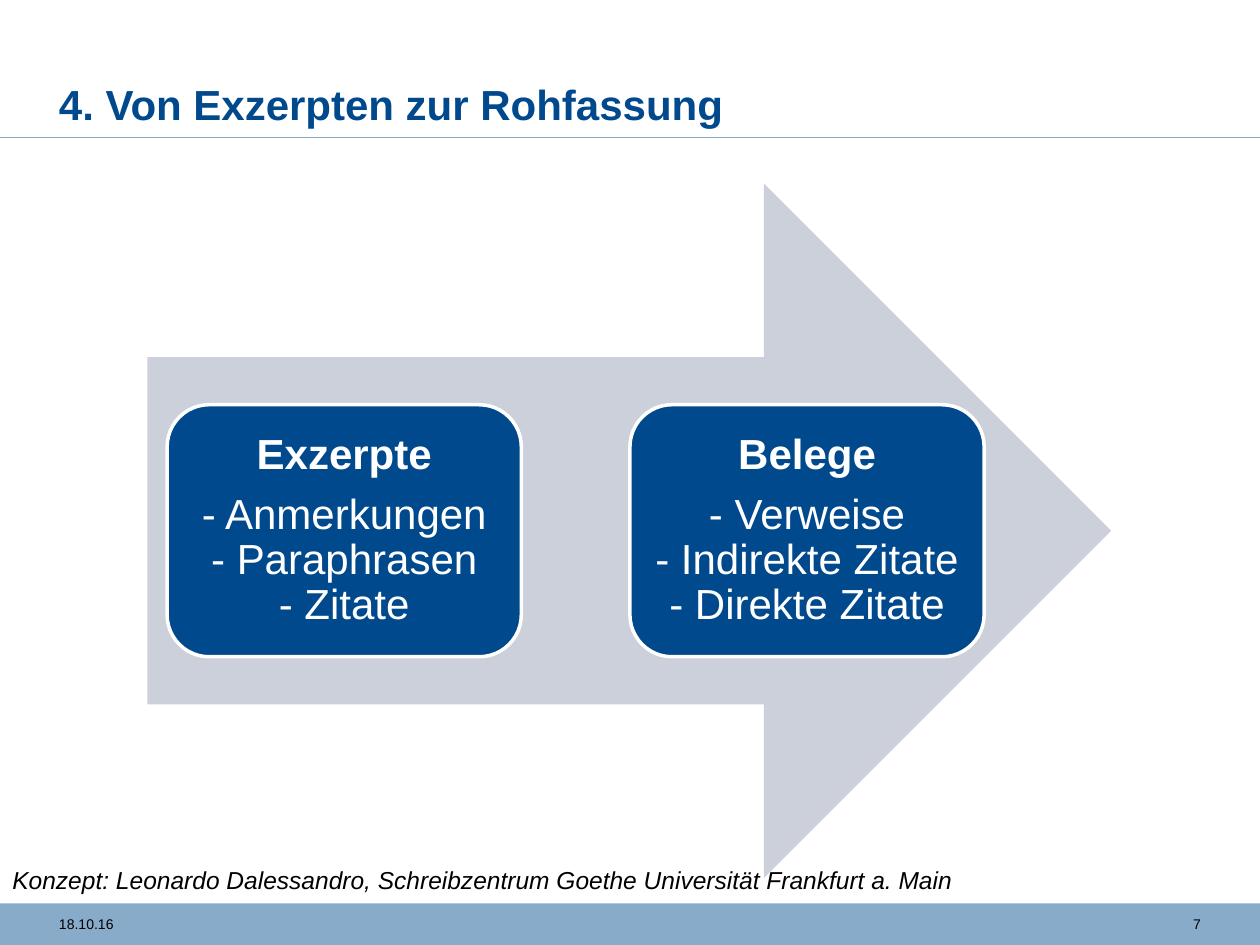
from dataclasses import dataclass

from lxml.etree import SubElement
from pptx import Presentation
from pptx.dml.color import RGBColor
from pptx.enum.shapes import MSO_CONNECTOR, MSO_SHAPE
from pptx.enum.text import MSO_ANCHOR, PP_ALIGN
from pptx.oxml.ns import qn
from pptx.util import Cm, Pt


@dataclass(frozen=True)
class Theme:
    font: str = "Arial"
    navy: str = "00498D"
    sky: str = "89ABCA"
    pale: str = "CCD0DB"
    white: str = "FFFFFF"
    black: str = "000000"
    large: int = 24
    note: int = 14
    small: int = 8


THEME = Theme()
WIDTH, HEIGHT = 25.4, 19.05
CARDS = [
    ("Exzerpte", ["- Anmerkungen", "- Paraphrasen", "- Zitate"]),
    ("Belege", ["- Verweise", "- Indirekte Zitate", "- Direkte Zitate"]),
]


def apply(target, **values):
    for name, value in values.items():
        setattr(target, name, value)


def style(para, size, color, **values):
    apply(para.font, name=THEME.font, size=Pt(size), **values)
    para.font.color.rgb = RGBColor.from_string(color)


def block(slide, kind, box, fill, edge=None):
    shape = slide.shapes.add_shape(kind, *map(Cm, box))
    shape.shadow.inherit = False
    shape.fill.solid()
    shape.fill.fore_color.rgb = RGBColor.from_string(fill)
    if edge:
        shape.line.color.rgb = RGBColor.from_string(edge)
        shape.line.width = Pt(2)
    else:
        shape.line.fill.background()
    return shape


def label(slide, box, text, size, color, frame=None, align=PP_ALIGN.LEFT, **font):
    area = slide.shapes.add_textbox(*map(Cm, box)).text_frame
    basic = {"word_wrap": True, "margin_left": 0, "margin_right": 0}
    apply(area, **(basic | (frame or {})))
    para = area.paragraphs[0]
    apply(para, text=text, alignment=align)
    style(para, size, color, **font)


def header(slide, box, text):
    left, top, width, height = box
    # Title
    label(slide, (left + 1.19, top + 0.41, 20.4, 2.31), text, THEME.large,
          THEME.navy, {"vertical_anchor": MSO_ANCHOR.BOTTOM}, bold=True)
    # Rule below the title
    base = Cm(top + height)
    rule = slide.shapes.add_connector(
        MSO_CONNECTOR.STRAIGHT, Cm(left + width), base, Cm(left), base)
    rule.line.color.rgb = RGBColor.from_string(THEME.sky)
    rule.line.width = Pt(1)
    SubElement(rule._element.spPr, qn("a:effectLst"))


def card(slide, box, head, items):
    shape = block(slide, MSO_SHAPE.ROUNDED_RECTANGLE, box, THEME.navy, THEME.white)
    area = shape.text_frame
    apply(area, word_wrap=True, vertical_anchor=MSO_ANCHOR.MIDDLE)
    first, second = area.paragraphs[0], area.add_paragraph()
    for para, text in ((first, head), (second, "\v".join(items))):
        apply(para, text=text, alignment=PP_ALIGN.CENTER, line_spacing=0.9)
        style(para, THEME.large, THEME.white, bold=para is first)
    first.space_after = Pt(0.35 * THEME.large)


def process(slide, box, cards):
    left, top, width, height = box
    # Arrow behind the cards
    block(slide, MSO_SHAPE.RIGHT_ARROW, box, THEME.pale)
    # Cards, centred on the arrow's axis
    wide, tall, gap, inset = 7.14, 5.08, 2.19, 0.4
    for i, (head, items) in enumerate(cards):
        x = left + inset + i * (wide + gap)
        card(slide, (x, top + (height - tall) / 2, wide, tall), head, items)


def footer(slide, box, date, page):
    left, top, width, height = box
    block(slide, MSO_SHAPE.RECTANGLE, box, THEME.sky)
    # Date on the left, page number on the right
    y, tall, side = top + 0.13, 0.64, 1.19
    label(slide, (left + side, y, 5.3, tall), date, THEME.small, THEME.black)
    label(slide, (left + width - side - 1.27, y, 1.27, tall), page,
          THEME.small, THEME.black, align=PP_ALIGN.RIGHT)


def credit(slide, box, text):
    pad = {"margin_left": Cm(0.25), "margin_right": Cm(0.25), "word_wrap": False}
    label(slide, box, text, THEME.note, THEME.black, pad, italic=True)


def main():
    deck = Presentation()
    apply(deck, slide_width=Cm(WIDTH), slide_height=Cm(HEIGHT))
    slide = deck.slides.add_slide(deck.slide_layouts[6])
    footer(slide, (0, 18.21, WIDTH, 0.84), "18.10.16", "7")
    header(slide, (0, 0, WIDTH, 2.77), "4. Von Exzerpten zur Rohfassung")
    process(slide, (2.97, 3.7, 19.43, 14), CARDS)
    credit(slide, (0, 17.32, 19.84, 0.86),
           "Konzept: Leonardo Dalessandro, Schreibzentrum "
           "Goethe Universität Frankfurt a. Main")
    deck.save("out.pptx")


if __name__ == "__main__":
    main()
